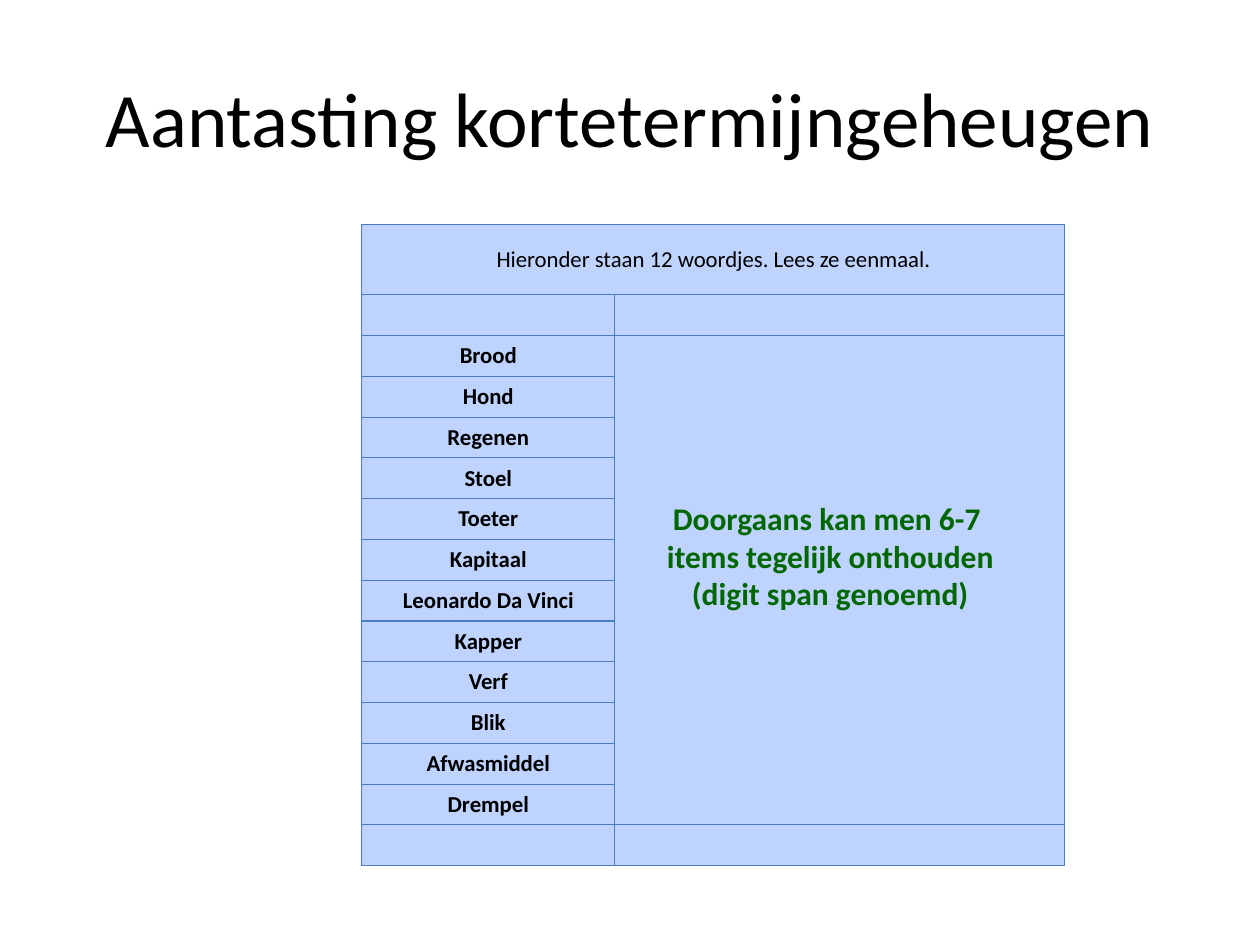
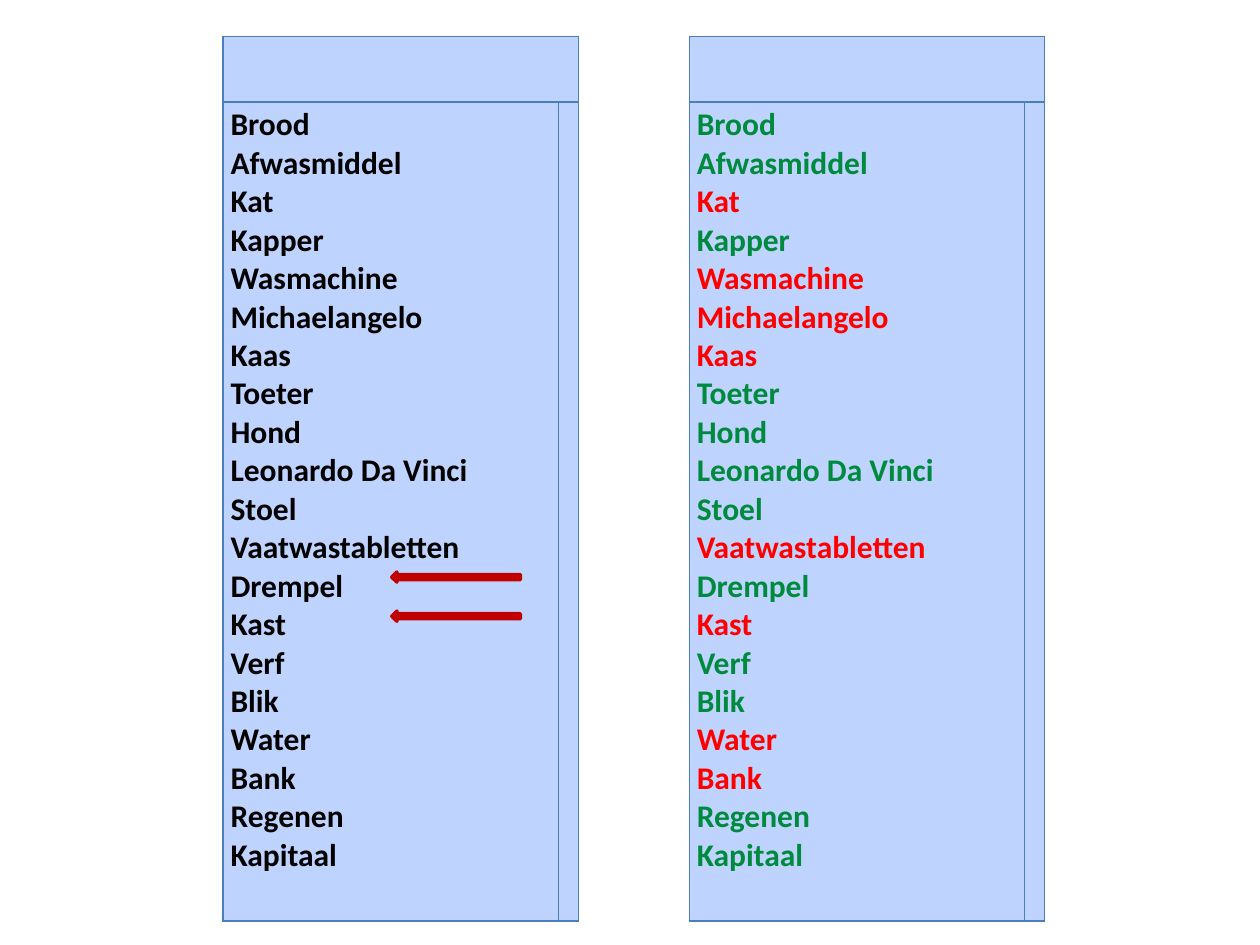
from lxml import etree
from pptx import Presentation
from pptx.dml.color import RGBColor
from pptx.enum.shapes import MSO_SHAPE
from pptx.enum.text import MSO_ANCHOR, PP_ALIGN
from pptx.oxml.ns import qn
from pptx.util import Inches, Pt

MIDDLE, TOP = MSO_ANCHOR.MIDDLE, MSO_ANCHOR.TOP
CENTER, LEFT = PP_ALIGN.CENTER, PP_ALIGN.LEFT
RIGHT_ARROW = MSO_SHAPE.RIGHT_ARROW

BLACK = RGBColor(0x00, 0x00, 0x00)
CELL_BLUE = RGBColor(0xBF, 0xD3, 0xFF)
BORDER_BLUE = RGBColor(0x4B, 0x7E, 0xBC)
NOTE_GREEN = RGBColor(0x00, 0x66, 0x00)
KNOWN_GREEN = RGBColor(0x00, 0x8A, 0x3E)
NEW_RED = RGBColor(0xFF, 0x00, 0x00)
ARROW_RED = RGBColor(0xC0, 0x00, 0x00)
FONT = "Calibri"

TITLE = "Aantasting kortetermijngeheugen"
INSTRUCTION = "Hieronder staan 12 woordjes. Lees ze eenmaal."
NOTE = ["Doorgaans kan men 6-7 ", "items tegelijk onthouden", "(digit span genoemd)"]
MEMORY_WORDS = ["Brood", "Hond", "Regenen", "Stoel", "Toeter", "Kapitaal",
                "Leonardo Da Vinci", "Kapper", "Verf", "Blik", "Afwasmiddel", "Drempel"]
RECALL_WORDS = ["Brood", "Afwasmiddel", "Kat", "Kapper", "Wasmachine", "Michaelangelo",
                "Kaas", "Toeter", "Hond", "Leonardo Da Vinci", "Stoel",
                "Vaatwastabletten", "Drempel", "Kast", "Verf", "Blik", "Water", "Bank",
                "Regenen", "Kapitaal"]

MEMORY_COLUMNS = [2.01, 3.57]
MEMORY_ROWS = [0.56] + [0.324] * (len(MEMORY_WORDS) + 2)
RECALL_COLUMNS = [2.66, 0.16]
RECALL_ROWS = [0.52, 6.5]
RECALL_LEFTS = [1.77, 5.47]
ARROW_TOPS = [4.54, 4.85]


def write(paragraph, text, size=18, color=BLACK, bold=False, align=CENTER):
    paragraph.alignment = align
    span = paragraph.add_run()
    span.text = text
    span.font.name = FONT
    span.font.size = Pt(size)
    span.font.bold = bold
    span.font.color.rgb = color


def set_borders(cell):
    properties = cell._tc.get_or_add_tcPr()
    for side in ("a:lnL", "a:lnR", "a:lnT", "a:lnB"):
        line = etree.SubElement(properties, qn(side), w=str(Pt(0.75)))
        fill = etree.SubElement(line, qn("a:solidFill"))
        etree.SubElement(fill, qn("a:srgbClr"), val=str(BORDER_BLUE))


def set_margins(cell, side, end):
    cell.margin_left = cell.margin_right = Inches(side)
    cell.margin_top = cell.margin_bottom = Inches(end)


def add_grid(slide, left, top, columns, rows):
    """Add a blue table whose first row spans all columns."""
    frame = slide.shapes.add_table(len(rows), len(columns), Inches(left), Inches(top),
                                   Inches(sum(columns)), Inches(sum(rows)))
    table = frame.table
    table.first_row = table.horz_banding = False
    for column, width in zip(table.columns, columns):
        column.width = Inches(width)
    for row, height in zip(table.rows, rows):
        row.height = Inches(height)
    for cell in table.iter_cells():
        set_borders(cell)
        cell.fill.solid()
        cell.fill.fore_color.rgb = CELL_BLUE
        set_margins(cell, 0, 0)
    table.cell(0, 0).merge(table.cell(0, len(columns) - 1))
    return table


def fill_cell(cell, text, **style):
    set_margins(cell, 0.07, 0.04)
    cell.vertical_anchor = MIDDLE
    write(cell.text_frame.paragraphs[0], text, size=13, **style)


def build_memory_slide(deck):
    slide = deck.slides.add_slide(deck.slide_layouts[5])
    title = slide.shapes.title
    title.left, title.top, title.width, title.height = map(Inches, (0.5, 0.3, 9, 1.25))
    title.text_frame.vertical_anchor = MIDDLE
    write(title.text_frame.paragraphs[0], TITLE, size=44)

    table = add_grid(slide, 2.87, 1.78, MEMORY_COLUMNS, MEMORY_ROWS)
    fill_cell(table.cell(0, 0), INSTRUCTION)
    for row, word in enumerate(MEMORY_WORDS, start=2):
        fill_cell(table.cell(row, 0), word, bold=True)
    table.cell(2, 1).merge(table.cell(len(MEMORY_WORDS) + 1, 1))

    box = slide.shapes.add_textbox(Inches(4.09), Inches(3.91), Inches(5), Inches(1.01))
    frame = box.text_frame
    frame.word_wrap = True
    for index, line in enumerate(NOTE):
        paragraph = frame.add_paragraph() if index else frame.paragraphs[0]
        write(paragraph, line, color=NOTE_GREEN, bold=True)


def add_recall_list(slide, left, colors):
    cell = add_grid(slide, left, 0.29, RECALL_COLUMNS, RECALL_ROWS).cell(1, 0)
    set_margins(cell, 0.06, 0.03)
    cell.vertical_anchor = TOP
    paragraph = cell.text_frame.paragraphs[0]
    for index, (word, color) in enumerate(zip(RECALL_WORDS, colors)):
        if index:
            paragraph.add_line_break()
        write(paragraph, word, color=color, bold=True, align=LEFT)


def build_recall_slide(deck):
    slide = deck.slides.add_slide(deck.slide_layouts[6])
    plain = [BLACK] * len(RECALL_WORDS)
    marked = [KNOWN_GREEN if word in MEMORY_WORDS else NEW_RED for word in RECALL_WORDS]
    for left, colors in zip(RECALL_LEFTS, (plain, marked)):
        add_recall_list(slide, left, colors)
    for top in ARROW_TOPS:
        arrow = slide.shapes.add_shape(RIGHT_ARROW, Inches(3.11), Inches(top),
                                       Inches(1.02), Inches(0.08))
        arrow.rotation = 180
        arrow.shadow.inherit = False
        arrow.fill.solid()
        arrow.fill.fore_color.rgb = arrow.line.color.rgb = ARROW_RED
        arrow.line.width = Pt(2)


def main():
    deck = Presentation()
    deck.slide_width, deck.slide_height = Inches(10), Inches(7.5)
    build_memory_slide(deck)
    build_recall_slide(deck)
    deck.save("out.pptx")


if __name__ == "__main__":
    main()
